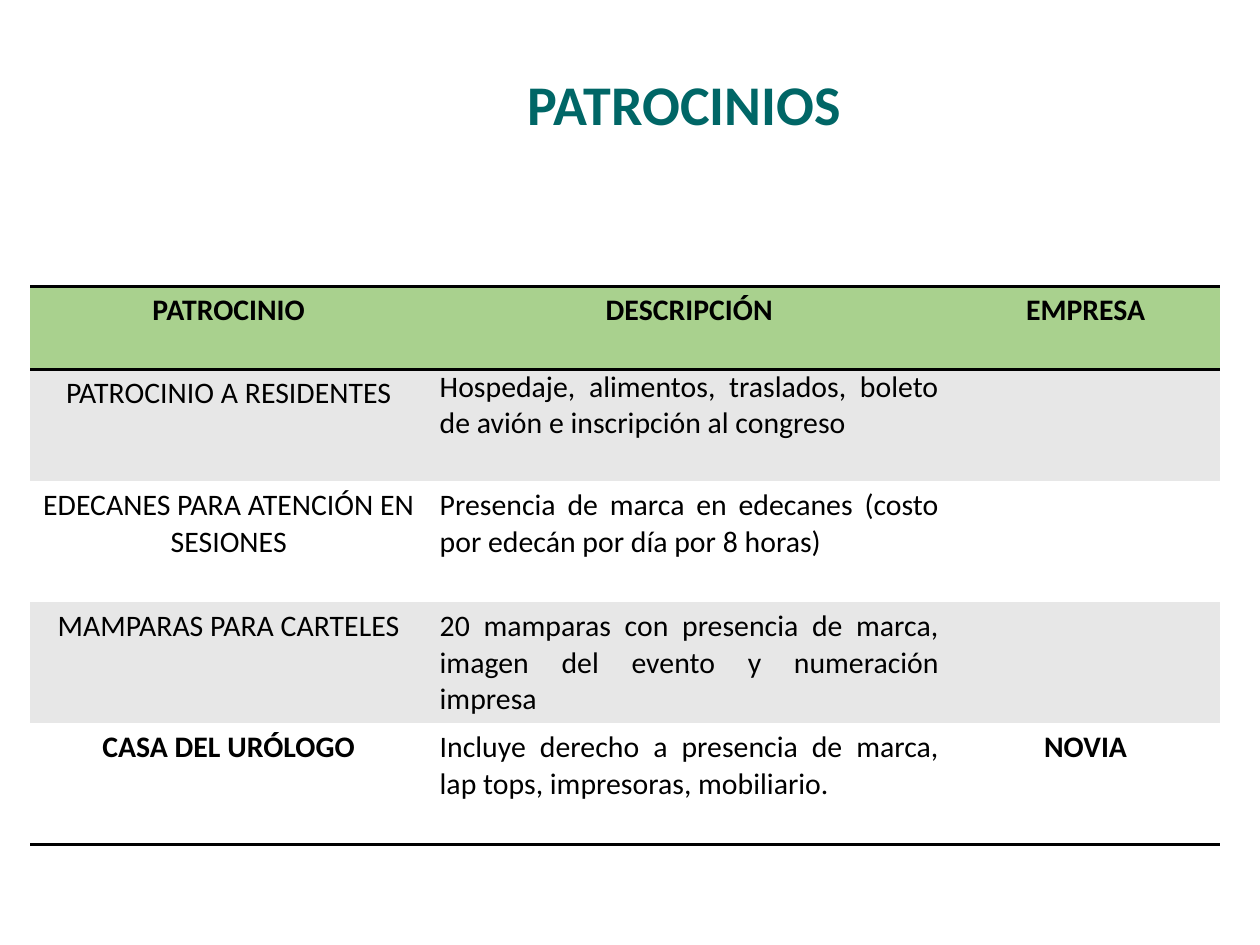
from dataclasses import dataclass

from lxml import etree
from pptx import Presentation
from pptx import util as u
from pptx.dml.color import RGBColor
from pptx.enum import text
from pptx.oxml import ns


@dataclass(frozen=True)
class Theme:
    font: str = "Calibri"
    title: str = "006666"
    ink: str = "000000"
    header: str = "A9D18E"
    bands: tuple = ("FFFFFF", "E7E7E7")
    title_size: int = 32
    table_size: int = 17
    rule_width: int = 2


THEME = Theme()
NO_STYLE = "{2D5ABB26-0587-4C30-8999-92F81FD0307C}"
CENTER, JUSTIFY = text.PP_ALIGN.CENTER, text.PP_ALIGN.JUSTIFY
HEADINGS = ("PATROCINIO", "DESCRIPCIÓN", "EMPRESA")
SPONSORSHIPS = (
    ("PATROCINIO A RESIDENTES",
     "Hospedaje, alimentos, traslados, boleto de avión e inscripción al congreso", ""),
    ("EDECANES PARA ATENCIÓN EN SESIONES",
     "Presencia de marca en edecanes (costo por edecán por día por 8 horas)", ""),
    ("MAMPARAS PARA CARTELES",
     "20 mamparas con presencia de marca, imagen del evento y numeración impresa", ""),
    ("CASA DEL URÓLOGO",
     "Incluye derecho a presencia de marca, lap tops, impresoras, mobiliario.", "NOVIA"),
)
COLUMN_WIDTHS = (8, 10.57, 5.41)
ROW_HEIGHTS = (1.67, 2.26, 2.44, 2.44, 2.44)


def write(frame, content, size=THEME.table_size, color=THEME.ink, bold=False, align=CENTER):
    para = frame.paragraphs[0]
    para.alignment = align
    if content:
        span = para.add_run()
        span.text = content
        span.font.name = THEME.font
        span.font.size = u.Pt(size)
        span.font.bold = bold
        span.font.color.rgb = RGBColor.from_string(color)


def add_rule(cell, side):
    properties = cell._tc.get_or_add_tcPr()
    line = etree.SubElement(properties, ns.qn(f"a:ln{side}"), w=str(u.Pt(THEME.rule_width)))
    fill = etree.SubElement(line, ns.qn("a:solidFill"))
    etree.SubElement(fill, ns.qn("a:srgbClr"), val=THEME.ink)


def fill_cell(cell, color):
    cell.fill.solid()
    cell.fill.fore_color.rgb = RGBColor.from_string(color)


def add_title(page, content):
    box = page.shapes.add_textbox(u.Cm(4.9), u.Cm(1.27), u.Cm(17.8), u.Cm(1.63))
    box.text_frame.word_wrap = True
    write(box.text_frame, content, size=THEME.title_size, color=THEME.title, bold=True)


def add_sponsorship_table(page):
    rows = (HEADINGS, *SPONSORSHIPS)
    last = len(rows) - 1
    table = page.shapes.add_table(
        len(rows), len(HEADINGS), u.Cm(0.61), u.Cm(5.77),
        u.Cm(sum(COLUMN_WIDTHS)), u.Cm(sum(ROW_HEIGHTS))).table
    table.horz_banding = False
    table._tbl.tblPr.find(ns.qn("a:tableStyleId")).text = NO_STYLE
    for column, width in zip(table.columns, COLUMN_WIDTHS):
        column.width = u.Cm(width)
    for row, height in zip(table.rows, ROW_HEIGHTS):
        row.height = u.Cm(height)

    for i, row in enumerate(rows):
        for j, content in enumerate(row):
            cell = table.cell(i, j)
            description = i > 0 and j == 1
            write(cell.text_frame, content, bold=i in (0, last) and not description,
                  align=JUSTIFY if description else CENTER)
            if i == 0:
                add_rule(cell, "T")
            if i in (0, last):
                add_rule(cell, "B")
            fill_cell(cell, THEME.bands[i % 2] if i else THEME.header)
    first_description = table.cell(1, 1)
    first_description.margin_top = first_description.margin_bottom = u.Cm(0)


def main():
    deck = Presentation()
    deck.slide_width, deck.slide_height = u.Cm(25.4), u.Cm(19.05)
    page = deck.slides.add_slide(deck.slide_layouts[6])
    add_title(page, "PATROCINIOS")
    add_sponsorship_table(page)
    deck.save("out.pptx")


if __name__ == "__main__":
    main()
